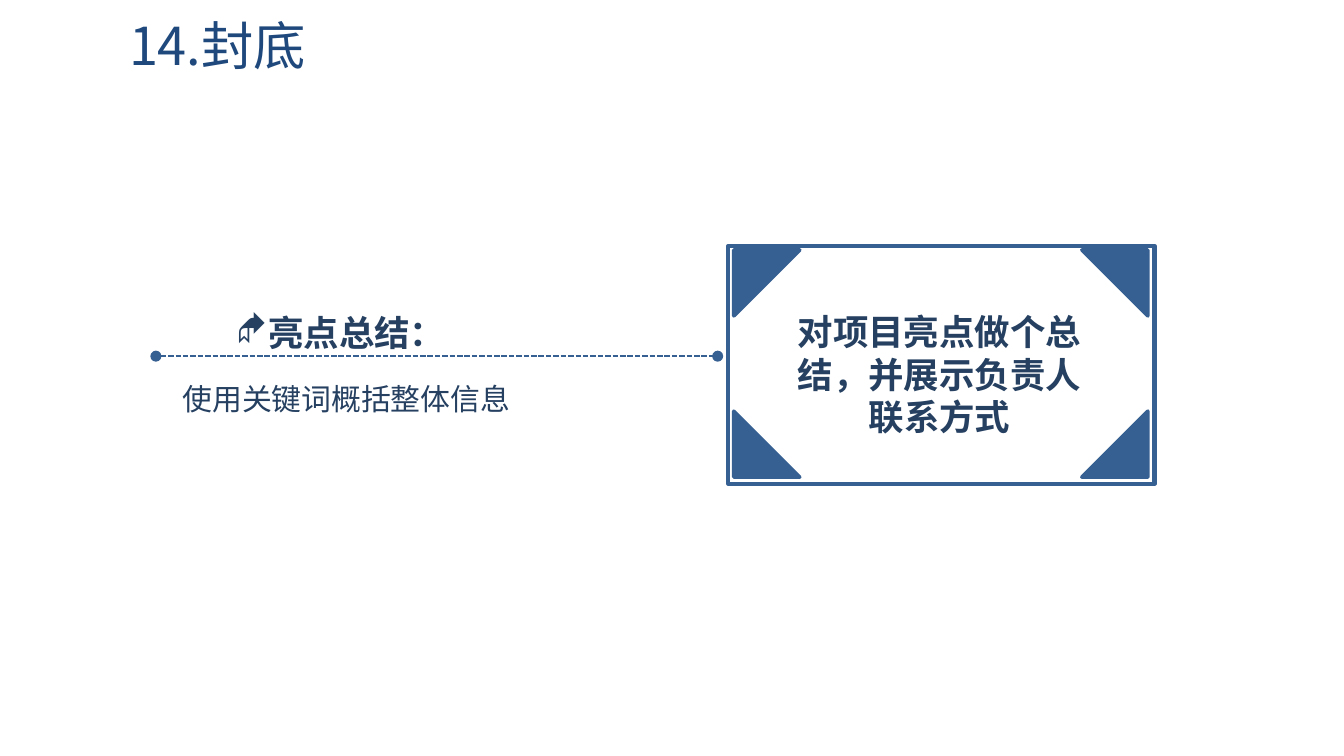
from typing import NamedTuple

from pptx import Presentation
from pptx.dml.color import RGBColor
from pptx.enum import dml, shapes, text
from pptx.oxml import ns
from pptx.oxml.xmlchemy import OxmlElement
from pptx.util import Inches, Pt

HUES = {"title": "1F497D", "frame": "376092", "ink": "254061"}
LEFT, MID = text.PP_ALIGN.LEFT, text.PP_ALIGN.CENTER
JUST = text.PP_ALIGN.JUSTIFY


class Box(NamedTuple):
    left: float
    top: float
    wide: float
    high: float


class Note(NamedTuple):
    words: str
    box: Box
    size: int
    face: str = "Arial"
    east: str = "Noto Sans CJK SC"
    hue: str = "ink"
    bold: bool = False
    align: text.PP_ALIGN = LEFT
    space: float = 1.0
    left: float = 0
    first: float = 0
    mark: str = ""


class Wedge(NamedTuple):
    left: float
    top: float
    turn: int


def color(name: str) -> RGBColor:
    return RGBColor.from_string(HUES[name])


def add(parent, tag: str, **attrs: str):
    node = OxmlElement(tag)
    for key, value in attrs.items():
        node.set(key, value)
    parent.append(node)
    return node


def apply(target, values: dict) -> None:
    for key, value in values.items():
        setattr(target, key, value)


def write(shape, note: Note) -> None:
    """Fill a text shape with one formatted paragraph."""
    frame = shape.text_frame
    apply(frame, {"word_wrap": True, "auto_size": text.MSO_AUTO_SIZE.NONE})
    para = frame.paragraphs[0]
    apply(para, {"alignment": note.align, "line_spacing": note.space})
    props = para._p.get_or_add_pPr()
    props.set("marL", str(Inches(note.left)))
    props.set("indent", str(Inches(note.first)))
    if note.mark:
        add(props, "a:buFont", typeface="Wingdings", charset="2")
        add(props, "a:buChar", char=note.mark)
    run = para.add_run()
    run.text = note.words
    apply(run.font, {"size": Pt(note.size), "name": note.face, "bold": note.bold})
    run.font.color.rgb = color(note.hue)
    add(run._r.get_or_add_rPr(), "a:ea", typeface=note.east)


def block(slide, kind, box: Box, width: float, solid: bool):
    """Draw an outlined shape, filled or hollow."""
    shape = slide.shapes.add_shape(kind, *map(Inches, box))
    shape.shadow.inherit = False
    shape.line.color.rgb = color("frame")
    shape.line.width = Pt(width)
    if solid:
        shape.fill.solid()
        shape.fill.fore_color.rgb = color("frame")
    else:
        shape.fill.background()
    return shape


def rule(slide, start: float, end: float, y: float) -> None:
    """Draw a dashed line with a dot at each end."""
    line = slide.shapes.add_connector(
        shapes.MSO_CONNECTOR.STRAIGHT, *map(Inches, (start, y, end, y)))
    line.line.color.rgb = color("frame")
    apply(line.line, {"width": Pt(1), "dash_style": dml.MSO_LINE.SQUARE_DOT})
    stroke = line._element.spPr.find(ns.qn("a:ln"))
    for tag in ("a:headEnd", "a:tailEnd"):
        add(stroke, tag, type="oval")
    add(line._element.spPr, "a:effectLst")


def main() -> None:
    # Wide 16:9 slide
    deck = Presentation()
    wide = Inches(10)
    apply(deck, {"slide_width": wide, "slide_height": wide * 9 // 16})
    slide = deck.slides.add_slide(deck.slide_layouts[5])

    # Title
    head = Note("14.封底", Box(0.86, 0.02, 3.69, 0.63), 28, "Noto Sans CJK JP",
                "Noto Sans CJK JP", "title", left=1, first=-1)
    title = slide.shapes.title
    places = ("left", "top", "width", "height")
    apply(title, dict(zip(places, map(Inches, head.box))))
    write(title, head)
    title.text_frame.vertical_anchor = text.MSO_ANCHOR.MIDDLE

    # Frame with a triangle in each corner
    kinds = shapes.MSO_SHAPE
    block(slide, kinds.FLOWCHART_PROCESS, Box(5.42, 1.83, 3.17, 1.77), 2.25, False)
    west, east, north, south = 5.46, 8.05, 1.86, 3.06
    for wedge in (Wedge(west, south, 0), Wedge(east, north, 180),
                  Wedge(east, south, 270), Wedge(west, north, 90)):
        box = Box(wedge.left, wedge.top, 0.49, 0.49)
        block(slide, kinds.RIGHT_TRIANGLE, box, 2, True).rotation = wedge.turn

    # Summary and its heading
    for note in (
        Note("对项目亮点做个总结，并展示负责人联系方式", Box(5.77, 2.26, 2.44, 1.06),
             19, "Noto Sans CJK SC", bold=True, align=MID),
        Note("亮点总结：", Box(1.18, 2.17, 3.8, 0.48), 19, bold=True,
             align=JUST, space=1.3, first=0.48, mark="◆"),
        Note("使用关键词概括整体信息", Box(1.06, 2.7, 3.84, 0.42), 16,
             space=1.3, first=0.2),
    ):
        write(slide.shapes.add_textbox(*map(Inches, note.box)), note)

    # Dotted link to the frame
    rule(slide, 1.16, 5.34, 2.65)

    deck.save("out.pptx")


if __name__ == "__main__":
    main()
